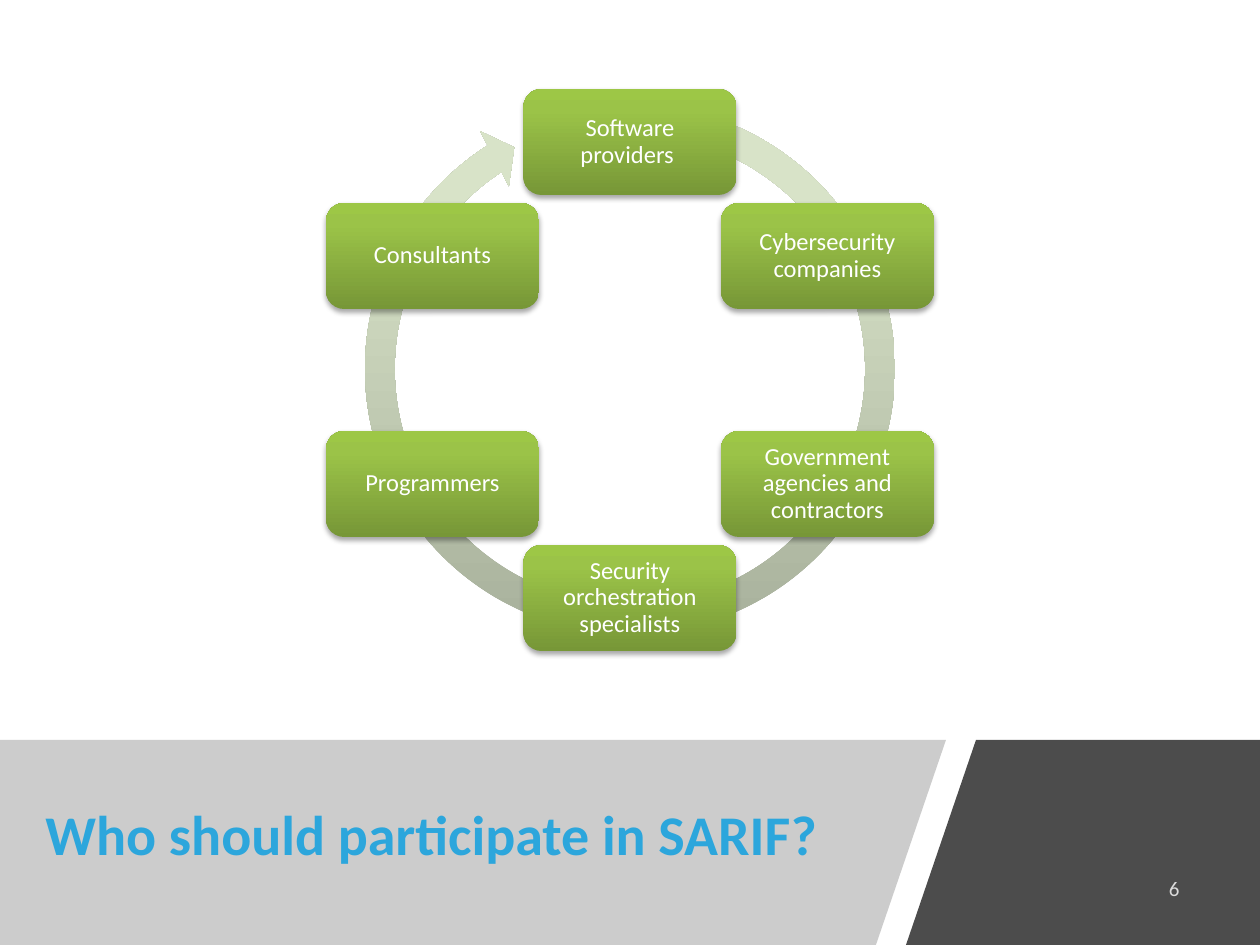
import math
from dataclasses import dataclass

from lxml import etree
from pptx import Presentation
from pptx.dml.color import RGBColor
from pptx.enum.shapes import MSO_SHAPE
from pptx.enum.text import MSO_ANCHOR, PP_ALIGN
from pptx.oxml.ns import qn
from pptx.util import Emu, Pt

ROUNDED, RING_ARROW = MSO_SHAPE.ROUNDED_RECTANGLE, MSO_SHAPE.CIRCULAR_ARROW
MIDDLE = MSO_ANCHOR.MIDDLE
LEFT, CENTER, RIGHT = PP_ALIGN.LEFT, PP_ALIGN.CENTER, PP_ALIGN.RIGHT

PX_PER_INCH = 126
SLIDE_WIDTH, SLIDE_HEIGHT = 1260, 945


def px(length):
    return Emu(round(length * 914400 / PX_PER_INCH))


@dataclass(frozen=True)
class Theme:
    font: str = "Calibri"
    title_size: int = 32
    node_size: int = 14
    number_size: int = 12
    title: str = "2CA6DC"
    light: str = "FFFFFF"
    band: str = "808080"
    panel: str = "000000"
    shadow: str = "000000"
    # Gradient stops run from bottom to top: (percent, colour)
    ring: tuple = ((0, "A6AF9A"), (80, "D8E3C8"), (100, "D9E4C8"))
    node: tuple = ((0, "779737"), (80, "9BC348"), (100, "9DC746"))


def add_color(parent, color, alpha=100):
    element = etree.SubElement(parent, qn("a:srgbClr"), val=color)
    if alpha < 100:
        set_alpha(element, alpha)


def set_alpha(color_element, percent):
    etree.SubElement(color_element, qn("a:alpha"), val=str(percent * 1000))


class SlideBuilder:
    def __init__(self, slide, theme):
        self.slide = slide
        self.theme = theme

    def polygon(self, points, color, alpha):
        corners = [(px(x), px(y)) for x, y in points]
        builder = self.slide.shapes.build_freeform(*corners[0])
        builder.add_line_segments(corners[1:], close=True)
        shape = builder.convert_to_shape()
        shape.shadow.inherit = False
        shape.line.fill.background()
        shape.fill.solid()
        shape.fill.fore_color.rgb = RGBColor.from_string(color)
        set_alpha(shape._element.spPr.find(".//" + qn("a:srgbClr")), alpha)

    def gradient_shape(self, kind, box, stops):
        shape = self.slide.shapes.add_shape(kind, *map(px, box))
        shape.shadow.inherit = False
        shape.line.fill.background()
        shape.fill.gradient()
        shape.fill.gradient_angle = 90
        stop_list = shape._element.spPr.find(".//" + qn("a:gsLst"))
        for old_stop in list(stop_list):
            stop_list.remove(old_stop)
        for percent, color in stops:
            stop = etree.SubElement(stop_list, qn("a:gs"), pos=str(percent * 1000))
            add_color(stop, color)
        return shape

    def ring(self, box, adjustments):
        shape = self.gradient_shape(RING_ARROW, box, self.theme.ring)
        for index, value in enumerate(adjustments):
            shape.adjustments[index] = value

    def node(self, label, box):
        shape = self.gradient_shape(ROUNDED, box, self.theme.node)
        shape.adjustments[0] = 0.17
        effects = shape._element.spPr.find(qn("a:effectLst"))
        shadow = etree.SubElement(
            effects, qn("a:outerShdw"), blurRad=str(Pt(3.1)),
            dist=str(Pt(1.8)), dir="5400000", rotWithShape="0")
        add_color(shadow, self.theme.shadow, 35)
        frame = shape.text_frame
        frame.margin_left = frame.margin_right = px(8)
        frame.margin_top = frame.margin_bottom = px(8)
        self.set_text(frame, label, self.theme.node_size, self.theme.light, CENTER, spacing=0.9)

    def text(self, words, box, size, color, align, **style):
        frame = self.slide.shapes.add_textbox(*map(px, box)).text_frame
        self.set_text(frame, words, size, color, align, **style)

    def set_text(self, frame, words, size, color, align, bold=False, spacing=None, alpha=100):
        frame.word_wrap = True
        frame.vertical_anchor = MIDDLE
        paragraph = frame.paragraphs[0]
        paragraph.text = words
        paragraph.alignment = align
        paragraph.line_spacing = spacing
        font = paragraph.font
        font.name, font.size, font.bold = self.theme.font, Pt(size), bold
        font.color.rgb = RGBColor.from_string(color)
        if alpha < 100:
            set_alpha(paragraph._p.find(".//" + qn("a:srgbClr")), alpha)


def main():
    deck = Presentation()
    deck.slide_width, deck.slide_height = px(SLIDE_WIDTH), px(SLIDE_HEIGHT)
    theme = Theme()
    page = SlideBuilder(deck.slides.add_slide(deck.slide_layouts[6]), theme)

    # Footer: title band and slide number panel
    top, bottom = 740, SLIDE_HEIGHT
    page.polygon([(0, top), (946, top), (876, bottom), (0, bottom)], theme.band, 40)
    page.text("Who should participate in SARIF?", (33, 762, 852, 151),
              theme.title_size, theme.title, LEFT, bold=True, spacing=0.9)
    page.polygon([(976, top), (SLIDE_WIDTH, top), (SLIDE_WIDTH, bottom), (906, bottom)],
                 theme.panel, 70)
    page.text("6", (1053, 863, 139, 50), theme.number_size, theme.light, RIGHT, alpha=80)

    # Cycle: ring behind participants, placed clockwise from the top
    center_x, center_y, radius = 630, 370, 228
    node_width, node_height = 213, 106
    page.ring((349, 88, 562, 562), (0.053, 3.126, 142.335, 171.239, 0.055))
    participants = [
        "Software providers ",
        "Cybersecurity companies",
        "Government agencies and contractors",
        "Security orchestration specialists",
        "Programmers",
        "Consultants",
    ]
    for index, participant in enumerate(participants):
        angle = math.tau * index / len(participants)
        left = center_x + radius * math.sin(angle) - node_width / 2
        upper = center_y - radius * math.cos(angle) - node_height / 2
        page.node(participant, (left, upper, node_width, node_height))

    deck.save("out.pptx")


if __name__ == "__main__":
    main()
